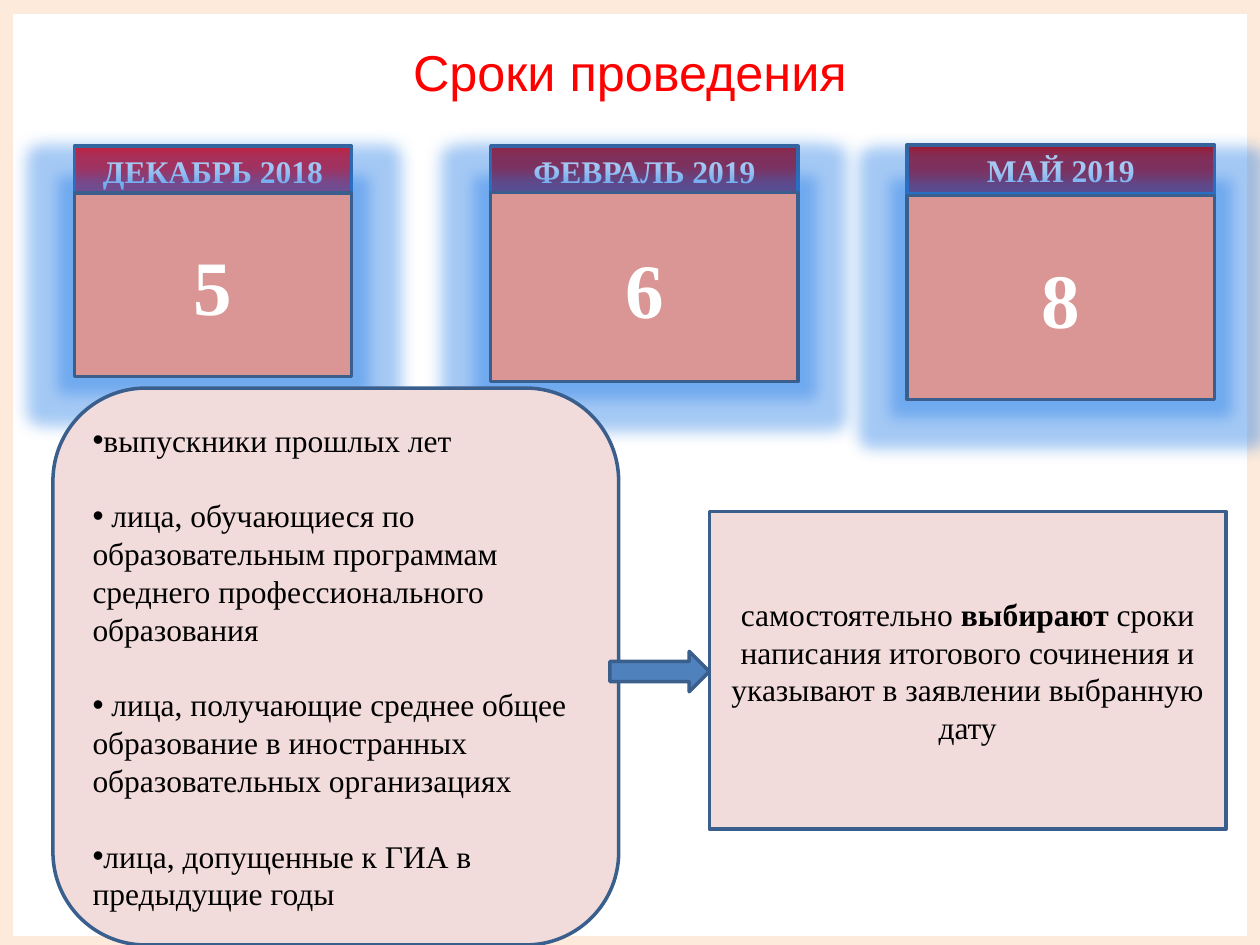
from lxml.etree import SubElement
from pptx import Presentation
from pptx.dml.color import RGBColor
from pptx.enum.shapes import MSO_SHAPE
from pptx.enum.text import MSO_ANCHOR, PP_ALIGN
from pptx.oxml.ns import qn
from pptx.util import Inches, Pt

TITLE = "Сроки проведения"
DATES = [
    {"month": "ДЕКАБРЬ 2018", "day": "5", "head": "red", "wide": 22, "top": 15.47, "box": (20.4, 19.47)},
    {"month": "ФЕВРАЛЬ 2019", "day": "6", "head": "dark", "wide": 24.4, "top": 15.47, "box": (20.4, 20)},
    {"month": "МАЙ 2019", "day": "8", "head": "dark", "wide": 24.4, "top": 15.33, "box": (20.67, 21.6)},
]
GROUPS = [
    "выпускники прошлых лет",
    " лица, обучающиеся по образовательным программам среднего профессионального образования",
    " лица, получающие среднее общее образование в иностранных образовательных организациях",
    "лица, допущенные к ГИА в предыдущие годы",
]
CHOICE = [
    ("самостоятельно ", False),
    ("выбирают", True),
    (" сроки написания итогового сочинения и указывают в заявлении выбранную дату", False),
]

HUES = {
    "red": "FF0000", "dark": "C00000", "rose": "D99694", "pale": "F2DCDB",
    "blue": "4F81BD", "edge": "3A5F8C", "gold": "E8BE24", "peach": "FDEADA",
    "white": "FFFFFF", "black": "000000", "glow": "1F7AE6",
}
SERIF = "Times New Roman"
HEAD = {"name": SERIF, "size": Pt(18), "bold": True, "color": "white"}
DAY = {**HEAD, "size": Pt(44)}
BODY = {"name": SERIF, "size": Pt(18), "bold": False, "color": "black"}
TOP = {"name": "Arial", "size": Pt(28.8), "bold": False, "color": "red"}
WIDTH, HEIGHT = Inches(10), Inches(7.5)
LEFT, STEP = 5.9, 33.05


def hue(name):
    return RGBColor.from_string(HUES[name])


def place(x, y, w, h):
    return [round(part * side / 100) for part, side in zip((x, y, w, h), (WIDTH, HEIGHT) * 2)]


def style(font, form):
    for key, value in form.items():
        if key == "color":
            font.color.rgb = hue(value)
        else:
            setattr(font, key, value)


def draw(kind, area, fill, edge="edge", weight=2):
    shape = slide.shapes.add_shape(kind, *place(*area))
    shape.shadow.inherit = False
    shape.fill.solid()
    shape.fill.fore_color.rgb = hue(fill)
    shape.line.color.rgb = hue(edge)
    shape.line.width = Pt(weight)
    return shape


def write(shape, lines, form, align=PP_ALIGN.CENTER):
    frame = shape.text_frame
    frame.word_wrap = True
    frame.vertical_anchor = MSO_ANCHOR.MIDDLE
    for i, runs in enumerate(lines):
        para = frame.add_paragraph() if i else frame.paragraphs[0]
        para.alignment = align
        for text, bold in runs:
            run = para.add_run()
            run.text = text
            style(run.font, {**form, "bold": bold})
    return frame.paragraphs


def bullet(para):
    props = para._p.get_or_add_pPr()
    props.set("marL", "0")
    props.set("indent", "0")
    SubElement(props, qn("a:buFont"), typeface="Arial")
    SubElement(props, qn("a:buChar"), char="•")


def glow(shape):
    effects = shape._element.spPr.find(qn("a:effectLst"))
    halo = SubElement(effects, qn("a:glow"), rad=str(Pt(18)))
    color = SubElement(halo, qn("a:srgbClr"), val=HUES["glow"])
    SubElement(color, qn("a:alpha"), val="40000")


deck = Presentation()
deck.slide_width, deck.slide_height = WIDTH, HEIGHT
slide = deck.slides.add_slide(deck.slide_layouts[5])

border = draw(MSO_SHAPE.FRAME, (0, 0.13, 100, 100.27), "gold", "peach", 6)
border.adjustments[0] = 0.008

title = slide.shapes.title
title.left, title.top, title.width, title.height = place(5, 4, 90, 7.07)
write(title, [[(TITLE, False)]], TOP)

for i, date in enumerate(DATES):
    x = LEFT + i * STEP
    head = draw(MSO_SHAPE.RECTANGLE, (x, date["top"], date["wide"], 5.2), date["head"])
    write(head, [[(date["month"], True)]], HEAD)
    y, high = date["box"]
    box = draw(MSO_SHAPE.RECTANGLE, (x, y, date["wide"], high), "rose")
    glow(box)
    write(box, [[(date["day"], True)]], DAY)

people = draw(MSO_SHAPE.ROUNDED_RECTANGLE, (4.2, 41.07, 44.9, 58.93), "pale")
for i, para in enumerate(write(people, [[(text, False)] for text in GROUPS], BODY, PP_ALIGN.LEFT)):
    bullet(para)
    if i:
        para.space_before = Pt(21.6)

choice = draw(MSO_SHAPE.RECTANGLE, (56.3, 54.13, 41, 33.6), "pale")
write(choice, [CHOICE], BODY)

draw(MSO_SHAPE.RIGHT_ARROW, (48.4, 68.93, 7.9, 4.27), "blue")

deck.save("out.pptx")
